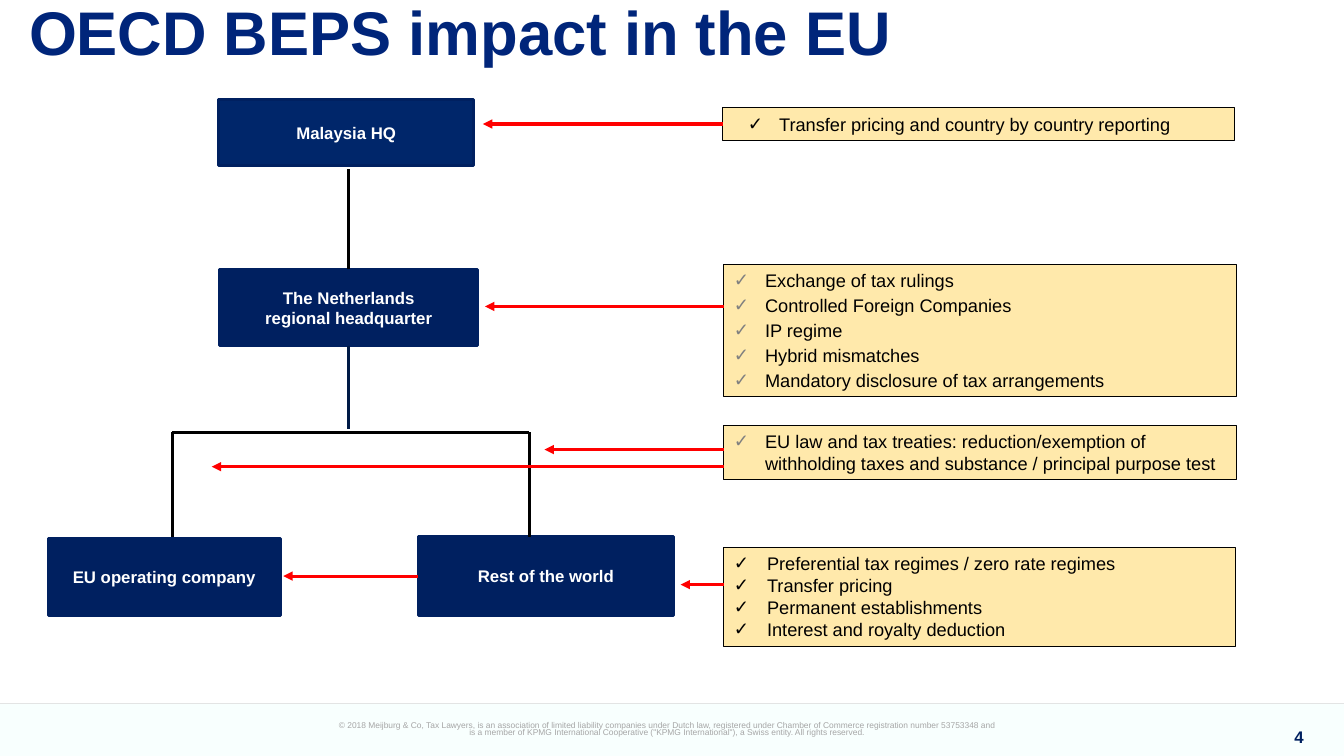
from dataclasses import dataclass

from lxml.etree import SubElement
from pptx import Presentation
from pptx.dml.color import RGBColor
from pptx.enum.shapes import MSO_CONNECTOR, MSO_SHAPE
from pptx.enum.text import MSO_ANCHOR, PP_ALIGN
from pptx.oxml.ns import qn
from pptx.util import Inches, Pt


@dataclass(frozen=True)
class Theme:
    font: str = "Arial"
    title: str = "00257A"
    navy: str = "002060"
    hq: str = "00266A"
    trunk: str = "001A46"
    white: str = "FFFFFF"
    black: str = "000000"
    red: str = "FF0000"
    note: str = "FFE9AB"
    grey: str = "808080"
    legal: str = "A6A6A6"
    rule: str = "E3E4E4"
    band: str = "DCFFFA"
    title_size: float = 44
    note_size: float = 13
    entity_size: float = 12
    legal_size: float = 6
    thick: float = 2.25
    thin: float = 0.75


T = Theme()
LEGAL = (
    "© 2018 Meijburg & Co, Tax Lawyers, is an association of limited liability companies "
    "under Dutch law, registered under Chamber of Commerce registration number 53753348 and "
    'is a member of KPMG International Cooperative ("KPMG International"), a Swiss entity. '
    "All rights reserved."
)


def rgb(color):
    return RGBColor.from_string(color)


def add_bullet(p, color, left, hang):
    pPr = p._p.get_or_add_pPr()
    pPr.set("marL", str(Inches(left)))
    pPr.set("indent", str(-Inches(hang)))
    SubElement(SubElement(pPr, qn("a:buClr")), qn("a:srgbClr"), val=color)
    SubElement(pPr, qn("a:buFont"), typeface=T.font)
    SubElement(pPr, qn("a:buChar"), char="✓")


def write(sp, text, size, color, bold=False, align=PP_ALIGN.LEFT, anchor=MSO_ANCHOR.TOP,
          insets=(0.1, 0.05, 0.1, 0.05), spacing=None, before=0, bullet=None):
    tf = sp.text_frame
    tf.word_wrap = True
    tf.vertical_anchor = anchor
    tf.margin_left, tf.margin_top, tf.margin_right, tf.margin_bottom = map(Inches, insets)
    for i, line in enumerate(text.split("\n")):
        p = tf.add_paragraph() if i else tf.paragraphs[0]
        if bullet:
            add_bullet(p, *bullet)
        p.alignment = align
        if spacing:
            p.line_spacing = spacing
        if i and before:
            p.space_before = Pt(before)
        r = p.add_run()
        r.text = line
        r.font.name = T.font
        r.font.size = Pt(size)
        r.font.bold = bold
        r.font.color.rgb = rgb(color)


def add_rect(s, box, fill, line=None, width=T.thin):
    sp = s.shapes.add_shape(MSO_SHAPE.RECTANGLE, *map(Inches, box))
    sp.shadow.inherit = False
    sp.fill.solid()
    sp.fill.fore_color.rgb = rgb(fill)
    if line:
        sp.line.color.rgb = rgb(line)
        sp.line.width = Pt(width)
    else:
        sp.line.fill.background()
    return sp


def add_text(s, box, text, **fmt):
    write(s.shapes.add_textbox(*map(Inches, box)), text, **fmt)


def add_line(s, start, end, color=T.black, width=T.thick, arrow=False):
    cx = s.shapes.add_connector(MSO_CONNECTOR.STRAIGHT, *map(Inches, start + end))
    cx.line.color.rgb = rgb(color)
    cx.line.width = Pt(width)
    if arrow:
        SubElement(cx.line._get_or_add_ln(), qn("a:tailEnd"), type="triangle")
    SubElement(cx._element.spPr, qn("a:effectLst"))
    return cx


def add_entity(s, box, text, fill=T.navy):
    sp = add_rect(s, box, fill, T.navy, 2)
    write(sp, text, size=T.entity_size, color=T.white, bold=True,
          align=PP_ALIGN.CENTER, anchor=MSO_ANCHOR.MIDDLE)
    return sp


def add_note(s, box, text, mark=T.black, left=0.31, hang=0.31, before=0):
    sp = add_rect(s, box, T.note, T.black)
    write(sp, text, size=T.note_size, color=T.black, before=before, bullet=(mark, left, hang))
    return sp


def add_footer(s, box):
    x, y, w, h = box
    band = add_rect(s, box, T.band)
    color = band.fill._xPr.find(qn("a:solidFill"))[0]
    SubElement(color, qn("a:alpha"), val="20000")
    add_line(s, (x, y), (x + w, y), T.rule, 0.25)
    add_text(s, (x + 3.36, y + 0.11, 6.51, 0.32), LEGAL, size=T.legal_size, color=T.legal,
             align=PP_ALIGN.CENTER, insets=(0, 0.08, 0, 0), spacing=0.7)
    add_text(s, (x + 12.2, y + 0.11, 0.73, 0.31), "4", size=T.entity_size, color=T.navy,
             bold=True, align=PP_ALIGN.RIGHT, insets=(0.08, 0.12, 0, 0))


def add_structure(s, box):
    x, y, w, h = box
    add_entity(s, (x + 1.69, y, 2.53, 0.65), "Malaysia HQ", T.hq)
    regional = add_entity(s, (x + 1.7, y + 1.68, 2.56, 0.76),
                          "The Netherlands\nregional headquarter")
    add_entity(s, (x, y + 4.35, 2.3, 0.77), "EU operating company")
    world = add_entity(s, (x + w - 2.53, y + 4.33, 2.53, 0.79), "Rest of the world")

    trunk, bar = x + 2.98, y + 3.3
    add_line(s, (trunk, y + 0.69), (trunk, y + 1.68)).end_connect(regional, 0)
    add_line(s, (trunk, y + 2.44), (trunk, bar - 0.03), T.trunk).begin_connect(regional, 2)
    branches = x + 1.23, x + 4.77
    add_line(s, (branches[0], bar), (branches[1], bar))
    for branch in branches:
        add_line(s, (branch, bar), (branch, y + 4.34))
    mid = y + 4.725
    add_line(s, (x + w - 2.53, mid), (x + 2.33, mid), T.red, arrow=True).begin_connect(world, 1)


def add_notes(s, box):
    x, y, w, h = box
    reporting = add_note(s, (x - 0.01, y, w - 0.01, 0.32),
                         "Transfer pricing and country by country reporting", left=0.46)
    add_note(s, (x, y + 1.55, w, 1.31),
             "Exchange of tax rulings\nControlled Foreign Companies\nIP regime\n"
             "Hybrid mismatches\nMandatory disclosure of tax arrangements",
             mark=T.grey, before=2.3)
    add_note(s, (x, y + 3.15, w, 0.54),
             "EU law and tax treaties: reduction/exemption of withholding taxes "
             "and substance / principal purpose test", mark=T.grey)
    add_note(s, (x, y + 4.36, w - 0.01, 0.98),
             "Preferential tax regimes / zero rate regimes\nTransfer pricing\n"
             "Permanent establishments\nInterest and royalty deduction", left=0.33, hang=0.33)

    top = add_line(s, (x - 0.01, y + 0.16), (x - 2.39, y + 0.16), T.red, arrow=True)
    top.begin_connect(reporting, 1)
    for drop, reach in ((1.97, 2.37), (3.39, 1.78), (3.56, 5.08), (4.73, 0.43)):
        add_line(s, (x, y + drop), (x - reach, y + drop), T.red, arrow=True)


def main():
    prs = Presentation()
    prs.slide_width, prs.slide_height = Inches(13.33), Inches(7.5)
    s = prs.slides.add_slide(prs.slide_layouts[6])
    add_footer(s, (0, 6.98, 13.33, 0.52))
    add_text(s, (0.19, -0.19, 11.6, 0.99), "OECD BEPS impact in the EU", size=T.title_size,
             color=T.title, bold=True, anchor=MSO_ANCHOR.MIDDLE)
    add_structure(s, (0.48, 0.99, 6.2, 5.12))
    add_notes(s, (7.18, 1.07, 5.08, 5.34))
    prs.save("out.pptx")


if __name__ == "__main__":
    main()
